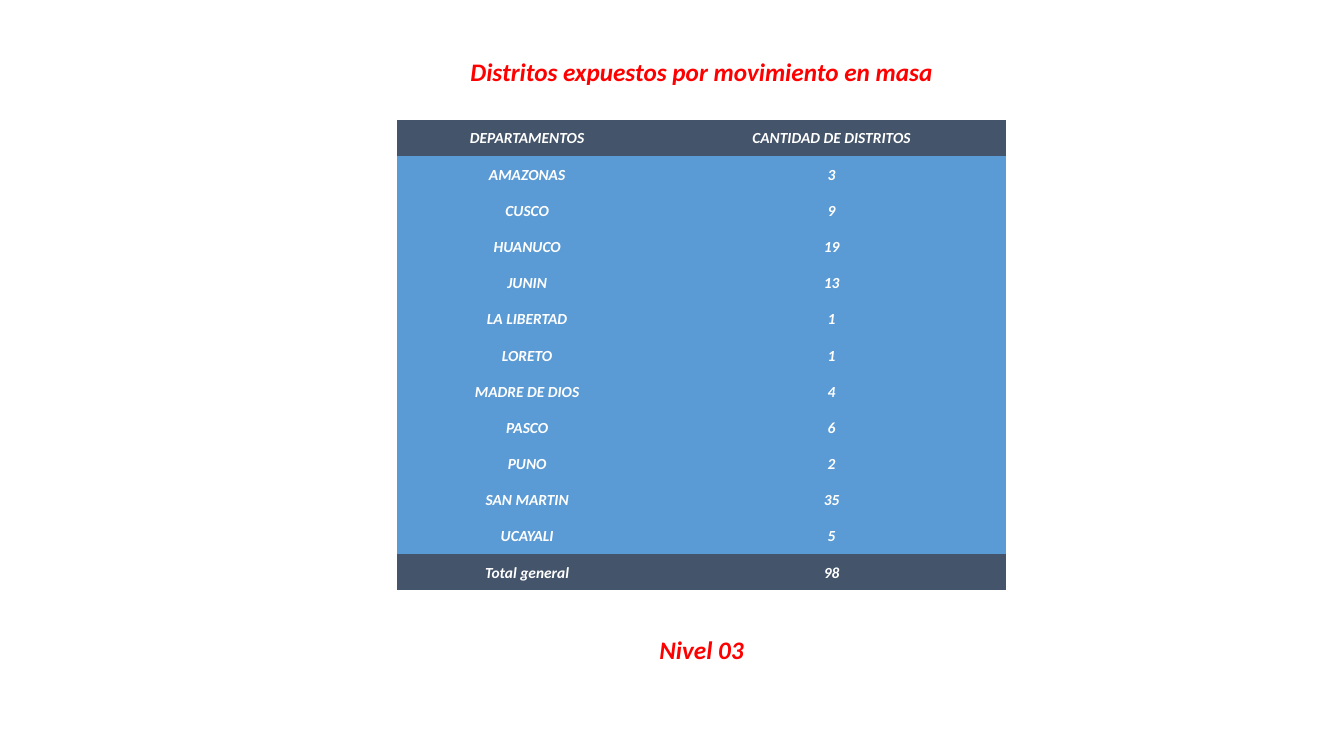
from dataclasses import dataclass

from pptx import Presentation
from pptx.dml.color import RGBColor
from pptx.enum.text import MSO_ANCHOR, MSO_AUTO_SIZE, PP_ALIGN
from pptx.oxml.ns import qn
from pptx.util import Inches, Pt

CENTER = PP_ALIGN.CENTER
MIDDLE = MSO_ANCHOR.MIDDLE
GROW = MSO_AUTO_SIZE.SHAPE_TO_FIT_TEXT
NO_GRID = "{2D5ABB26-0587-4C30-8999-92F81FD0307C}"

HEAD = ("DEPARTAMENTOS", "CANTIDAD DE DISTRITOS")
COUNTS = {
    "AMAZONAS": 3, "CUSCO": 9, "HUANUCO": 19, "JUNIN": 13,
    "LA LIBERTAD": 1, "LORETO": 1, "MADRE DE DIOS": 4, "PASCO": 6,
    "PUNO": 2, "SAN MARTIN": 35, "UCAYALI": 5,
}


@dataclass(frozen=True)
class Theme:
    font: str = "Calibri"
    red: str = "FF0000"
    white: str = "FFFFFF"
    dark: str = "44546A"
    blue: str = "5B9BD5"
    title: int = 18
    cell: int = 11


def write(frame, text, *, font, size, color):
    """Put one centred bold italic line in a text frame."""
    para = frame.paragraphs[0]
    para.alignment = CENTER
    run = para.add_run()
    run.text = text
    face = run.font
    face.name, face.size = font, Pt(size)
    face.bold = face.italic = True
    face.color.rgb = RGBColor.from_string(color)


class Page:
    """A slide measured in percent, with all items centred on one axis."""

    def __init__(self, deck, theme, axis):
        self.deck, self.theme, self.axis = deck, theme, axis
        self.slide = deck.slides.add_slide(deck.slide_layouts[6])

    def across(self, share):
        return round(self.deck.slide_width * share / 100)

    def down(self, share):
        return round(self.deck.slide_height * share / 100)

    def place(self, top, width, height):
        left = self.axis - width / 2
        return (self.across(left), self.down(top),
                self.across(width), self.down(height))

    def label(self, text, top, width, height=5.33, wrap=True):
        look = self.theme
        frame = self.slide.shapes.add_textbox(
            *self.place(top, width, height)).text_frame
        frame.word_wrap = wrap
        frame.auto_size = GROW
        write(frame, text, font=look.font, size=look.title, color=look.red)

    def table(self, rows, top, widths, step):
        """Draw rows, with the first and last in the dark fill."""
        look = self.theme
        shape = self.slide.shapes.add_table(
            len(rows), len(widths),
            *self.place(top, sum(widths), step * len(rows)))
        for style in shape.element.iter(qn("a:tableStyleId")):
            style.text = NO_GRID
        grid = shape.table
        grid.horz_banding = False
        for col, width in zip(grid.columns, widths):
            col.width = self.across(width)
        for at, row in enumerate(rows):
            grid.rows[at].height = self.down(step)
            fill = look.dark if at in (0, len(rows) - 1) else look.blue
            for cell, value in zip(grid.rows[at].cells, row):
                self.fill(cell, str(value), fill)

    def fill(self, cell, text, color):
        look = self.theme
        cell.fill.solid()
        cell.fill.fore_color.rgb = RGBColor.from_string(color)
        cell.vertical_anchor = MIDDLE
        cell.margin_left = cell.margin_right = cell.margin_top = Inches(0.01)
        cell.margin_bottom = 0
        write(cell.text_frame, text, font=look.font, size=look.cell,
              color=look.white)


def main():
    deck = Presentation()
    deck.slide_width, deck.slide_height = Inches(13.33), Inches(7.5)
    page = Page(deck, Theme(), axis=52.2)
    page.label("Distritos expuestos por movimiento en masa",
               top=6.8, width=36.3, wrap=False)
    total = ("Total general", sum(COUNTS.values()))
    page.table([HEAD, *COUNTS.items(), total],
               top=15.87, widths=(19.35, 25.95), step=4.79)
    page.label("Nivel 03", top=83.2, width=8.03)
    deck.save("out.pptx")


if __name__ == "__main__":
    main()
